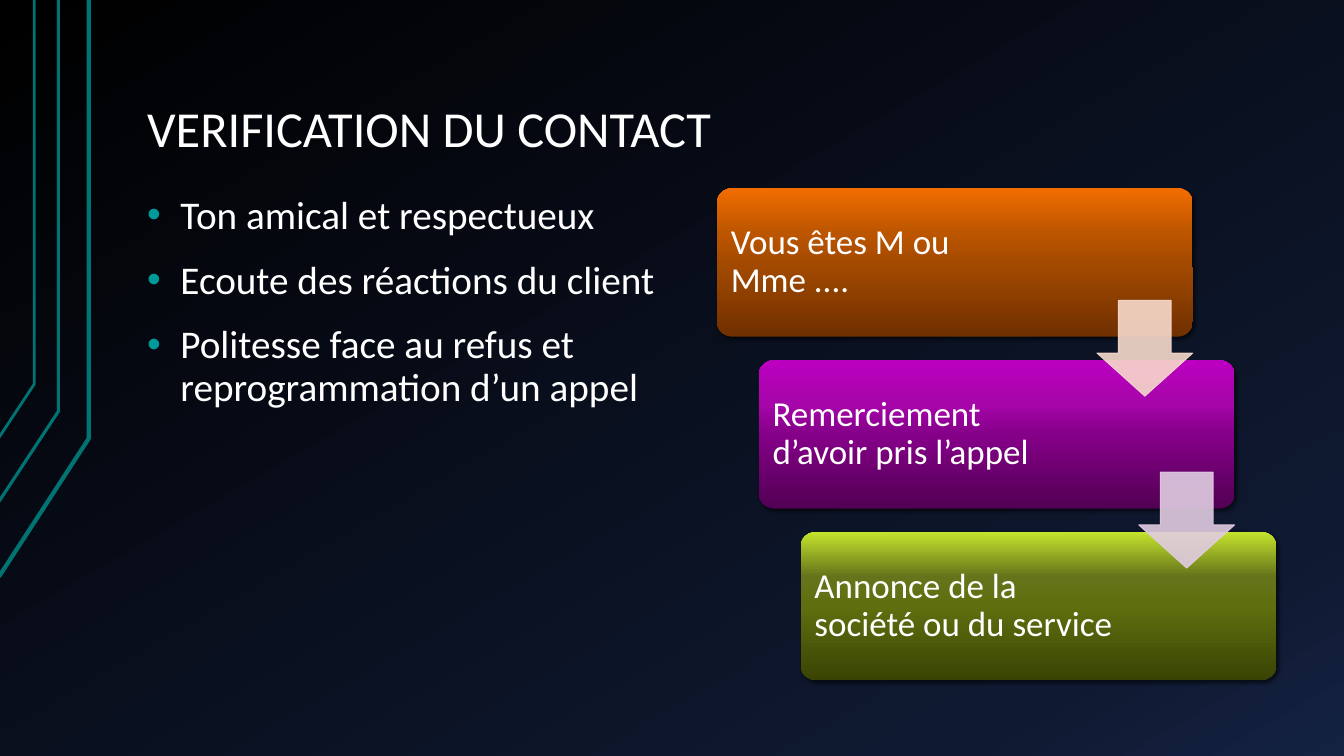
from dataclasses import dataclass

import lxml.etree
import pptx
import pptx.dml.color
import pptx.enum.shapes
import pptx.enum.text
import pptx.oxml
import pptx.oxml.ns
import pptx.util

Inches = pptx.util.Inches
Pt = pptx.util.Pt
qn = pptx.oxml.ns.qn
SHAPES = pptx.enum.shapes.MSO_SHAPE
ANCHORS = pptx.enum.text.MSO_ANCHOR


@dataclass(frozen=True)
class Theme:
    font: str = "Calibri"
    text: str = "FFFFFF"
    accent: str = "007373"
    bullet: str = "009999"
    shadow: str = "000000"
    background: tuple = ((0, "000000"), (85, "0F1931"), (100, "142242"))
    orange: tuple = ((0, "703000"), (50, "A44A00"), (70, "BC5500"), (100, "F26D00"))
    purple: tuple = ((0, "520054"), (50, "850088"), (70, "A505A9"), (100, "BC00C0"))
    green: tuple = ((0, "394404"), (50, "5F6F0F"), (70, "65741A"), (100, "C4E32D"))
    arrows: tuple = ("F7DACC", "E0CCE1")
    title_size: int = 36
    body_size: int = 28
    card_size: int = 25


THEME = Theme()

ACCENT_LINES = (
    (((-0.01, 5.72), (0.88, 4.35), (0.88, 0)), 3),
    (((-0.02, 4.99), (0.58, 4.08), (0.58, 0)), 2.25),
    (((-0.01, 4.34), (0.34, 3.81), (0.34, 0)), 2),
)
ADVICE = (
    "Ton amical et respectueux",
    "Ecoute des réactions du client",
    "Politesse face au refus et reprogrammation d’un appel",
)
STEPS = (
    ("Vous êtes M ou Mme ....", THEME.orange, 3.14),
    ("Remerciement d’avoir pris l’appel", THEME.purple, 3.27),
    ("Annonce de la société ou du service", THEME.green, 3.27),
)
CARD_LEFT, CARD_TOP = 7.11, 1.87
CARD_WIDTH, CARD_HEIGHT = 4.72, 1.47
STEP_RIGHT, STEP_DOWN = 0.415, 1.705
ARROW_LEFT, ARROW_TOP, ARROW_SIZE = 10.88, 2.98, 0.95


def rgb(color):
    return pptx.dml.color.RGBColor.from_string(color)


def add_element(parent, tag, **attributes):
    values = {name: str(value) for name, value in attributes.items()}
    return lxml.etree.SubElement(parent, qn(tag), values)


def set_gradient(fill, owner, stops, angle):
    fill.gradient()
    gradient = next(owner.iter(qn("a:gradFill")))
    for child in list(gradient):
        gradient.remove(child)
    stop_list = add_element(gradient, "a:gsLst")
    for position, color in stops:
        stop = add_element(stop_list, "a:gs", pos=position * 1000)
        add_element(stop, "a:srgbClr", val=color)
    add_element(gradient, "a:lin", ang=angle * 60000, scaled=0)


def add_accent_line(slide, points, width):
    corners = [(Inches(x), Inches(y)) for x, y in points]
    builder = slide.shapes.build_freeform(*corners[0], scale=1.0)
    builder.add_line_segments(corners[1:], close=False)
    shape = builder.convert_to_shape()
    shape.shadow.inherit = False
    shape.fill.background()
    shape.line.color.rgb = rgb(THEME.accent)
    shape.line.width = Pt(width)


def add_text(slide, box, lines, size, anchor, insets, spacing):
    shape = slide.shapes.add_textbox(*map(Inches, box))
    frame = shape.text_frame
    horizontal, vertical = map(Inches, insets)
    frame_format = {
        "word_wrap": True,
        "vertical_anchor": anchor,
        "margin_left": horizontal,
        "margin_right": horizontal,
        "margin_top": vertical,
        "margin_bottom": vertical,
    }
    for name, value in frame_format.items():
        setattr(frame, name, value)
    frame.text = "\n".join(lines)
    for paragraph in frame.paragraphs:
        for name, value in {"line_spacing": 0.9, **spacing}.items():
            setattr(paragraph, name, value)
        font = paragraph.runs[0].font
        for name, value in {"name": THEME.font, "size": Pt(size)}.items():
            setattr(font, name, value)
        font.color.rgb = rgb(THEME.text)
    return frame


def add_bullets(frame):
    for paragraph in frame.paragraphs:
        properties = paragraph._p.get_or_add_pPr()
        properties.set("marL", str(Inches(0.33)))
        properties.set("indent", str(Inches(-0.33)))
        color = add_element(properties, "a:buClr")
        add_element(color, "a:srgbClr", val=THEME.bullet)
        add_element(properties, "a:buFont", typeface="Arial")
        add_element(properties, "a:buChar", char="•")


def add_shadow(shape):
    effects = shape._element.spPr.find(qn("a:effectLst"))
    shadow = add_element(effects, "a:outerShdw", blurRad=Pt(3), dist=Pt(2),
                         dir=45 * 60000, algn="tl", rotWithShape=0)
    color = add_element(shadow, "a:srgbClr", val=THEME.shadow)
    add_element(color, "a:alpha", val=60000)


def add_card(slide, left, top, text, stops, text_width):
    box = (left, top, CARD_WIDTH, CARD_HEIGHT)
    shape = slide.shapes.add_shape(SHAPES.ROUNDED_RECTANGLE, *map(Inches, box))
    shape.adjustments[0] = 0.1
    shape.shadow.inherit = False
    shape.line.fill.background()
    set_gradient(shape.fill, shape._element, stops, 270)
    add_shadow(shape)
    text_box = (left + 0.04, top + 0.04, text_width, 1.38)
    add_text(slide, text_box, (text,), THEME.card_size, ANCHORS.MIDDLE, (0.1, 0.1), {})


def add_arrow(slide, left, top, color):
    box = (left, top, ARROW_SIZE, ARROW_SIZE)
    shape = slide.shapes.add_shape(SHAPES.DOWN_ARROW, *map(Inches, box))
    shape.adjustments[0] = 0.45
    shape.adjustments[1] = 0.55
    shape.adjustments[0], shape.adjustments[1] = 0.55, 0.45
    shape.shadow.inherit = False
    shape.fill.solid()
    shape.fill.fore_color.rgb = rgb(color)
    shape.line.color.rgb = rgb(color)
    shape.line.width = Pt(0.75)
    for element in shape._element.spPr.iter(qn("a:srgbClr")):
        add_element(element, "a:alpha", val=90000)


def main():
    presentation = pptx.Presentation()
    presentation.slide_width = Inches(13.33)
    presentation.slide_height = Inches(7.5)
    slide = presentation.slides.add_slide(presentation.slide_layouts[6])
    set_gradient(slide.background.fill, slide.element, THEME.background, 60)

    for points, width in ACCENT_LINES:
        add_accent_line(slide, points, width)

    add_text(slide, (1.33, 0.3, 11.33, 1.34), ("VERIFICATION DU CONTACT",),
             THEME.title_size, ANCHORS.BOTTOM, (0.13, 0.07), {})
    advice = add_text(slide, (1.33, 1.87, 5.55, 4.88), ADVICE, THEME.body_size,
                      ANCHORS.TOP, (0.13, 0.07), {"space_before": Pt(16)})
    add_bullets(advice)

    for index, step in enumerate(STEPS):
        add_card(slide, CARD_LEFT + index * STEP_RIGHT, CARD_TOP + index * STEP_DOWN, *step)
    for index, color in enumerate(THEME.arrows):
        add_arrow(slide, ARROW_LEFT + index * STEP_RIGHT, ARROW_TOP + index * STEP_DOWN, color)

    presentation.save("out.pptx")


if __name__ == "__main__":
    main()
